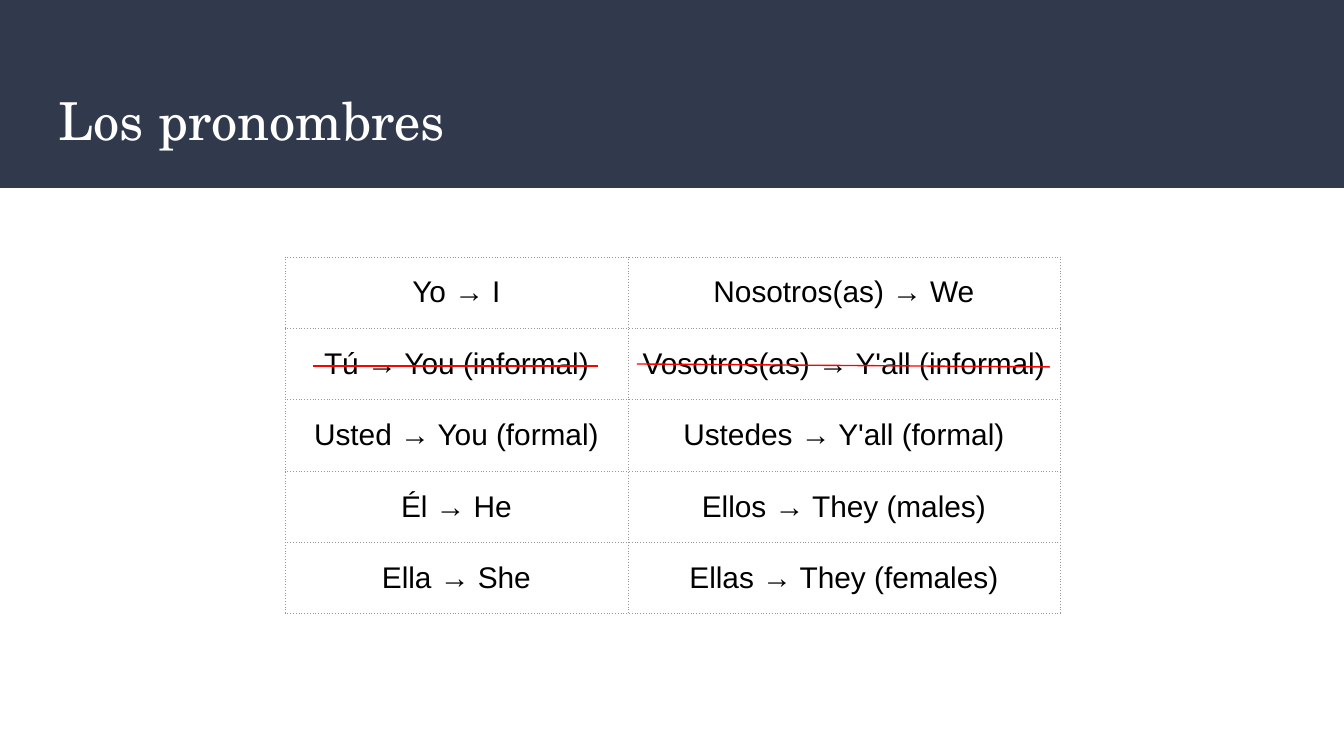
from lxml.etree import SubElement
from pptx import Presentation
from pptx.dml.color import RGBColor
from pptx.enum.shapes import MSO_CONNECTOR, MSO_SHAPE
from pptx.enum.text import MSO_ANCHOR, PP_ALIGN
from pptx.oxml import parse_xml
from pptx.oxml.ns import nsdecls, qn
from pptx.util import Emu, Pt

NAVY = RGBColor(0x31, 0x39, 0x4D)
WHITE = RGBColor(0xFF, 0xFF, 0xFF)
BLACK = RGBColor(0x00, 0x00, 0x00)
GRAY = RGBColor(0x99, 0x99, 0x99)
RED = RGBColor(0xFF, 0x00, 0x00)

EMU_PER_PX = 914400 / 134.4
COLUMN_WIDTHS = (343, 432)
TABLE_HEIGHT = 357
PRONOUNS = (
    ("Yo → I", "Nosotros(as) → We"),
    ("Tú → You (informal)", "Vosotros(as) → Y'all (informal)"),
    ("Usted → You (formal)", "Ustedes → Y'all (formal)"),
    ("Él → He", "Ellos → They (males)"),
    ("Ella → She", "Ellas → They (females)"),
)
STRIKES = ((637, 364, 1050, 367), (313, 366, 598, 366))


def px(*lengths):
    """Turn pixel lengths into a list of EMU lengths."""
    return [Emu(round(length * EMU_PER_PX)) for length in lengths]


def write(frame, text, *, font, size, color, align, inset):
    """Write one formatted, vertically centred paragraph in a frame or cell."""
    holder = frame if hasattr(frame, "paragraphs") else frame.text_frame
    para = holder.paragraphs[0]
    para.alignment = align
    span = para.add_run()
    span.text = text
    span.font.name = font
    span.font.size = Pt(size)
    span.font.bold = False
    span.font.color.rgb = color
    frame.vertical_anchor = MSO_ANCHOR.MIDDLE
    for side in ("left", "right", "top", "bottom"):
        setattr(frame, f"margin_{side}", px(inset)[0])


def add_title(page, text):
    """Fill the title placeholder and lay the navy band behind it."""
    title = page.shapes.title
    title.left, title.top, title.width, title.height = px(46, 74, 1252, 91)
    write(title.text_frame, text, font="TeX Gyre Schola", size=28,
          color=WHITE, align=PP_ALIGN.LEFT, inset=13)
    band = page.shapes.add_shape(MSO_SHAPE.RECTANGLE, *px(0, 0, 1344, 188))
    band.shadow.inherit = False
    band.fill.solid()
    band.fill.fore_color.rgb = NAVY
    band.line.fill.background()
    title.element.addprevious(band.element)


def dot_borders(cell):
    """Give a cell thin dotted borders on all four sides."""
    properties = cell._tc.get_or_add_tcPr()
    for position, side in enumerate(("lnL", "lnR", "lnT", "lnB")):
        border = parse_xml(
            f'<a:{side} {nsdecls("a")} w="{Pt(0.5)}"><a:solidFill>'
            f'<a:srgbClr val="{GRAY}"/></a:solidFill>'
            f'<a:prstDash val="dot"/></a:{side}>')
        properties.insert(position, border)


def add_pronoun_table(page):
    """Add the two-column table of pronouns."""
    place = px(285, 257, sum(COLUMN_WIDTHS), TABLE_HEIGHT)
    table = page.shapes.add_table(len(PRONOUNS), len(COLUMN_WIDTHS), *place).table
    table.first_row = table.horz_banding = False
    for column, width in zip(table.columns, px(*COLUMN_WIDTHS)):
        column.width = width
    for row, texts in zip(table.rows, PRONOUNS):
        row.height = px(TABLE_HEIGHT / len(PRONOUNS))[0]
        for cell, text in zip(row.cells, texts):
            write(cell, text, font="Arial", size=16, color=BLACK,
                  align=PP_ALIGN.CENTER, inset=9)
            cell.fill.background()
            dot_borders(cell)


def add_strike(page, ends):
    """Draw a thin red line through a pronoun."""
    strike = page.shapes.add_connector(MSO_CONNECTOR.STRAIGHT, *px(*ends))
    strike.line.color.rgb = RED
    strike.line.width = Pt(0.75)
    SubElement(strike.element.spPr, qn("a:effectLst"))


def main():
    """Build and save the pronoun slide."""
    deck = Presentation()
    deck.slide_width, deck.slide_height = px(1344, 756)
    page = deck.slides.add_slide(deck.slide_layouts[5])
    add_title(page, "Los pronombres")
    add_pronoun_table(page)
    for ends in STRIKES:
        add_strike(page, ends)
    deck.save("out.pptx")


if __name__ == "__main__":
    main()
